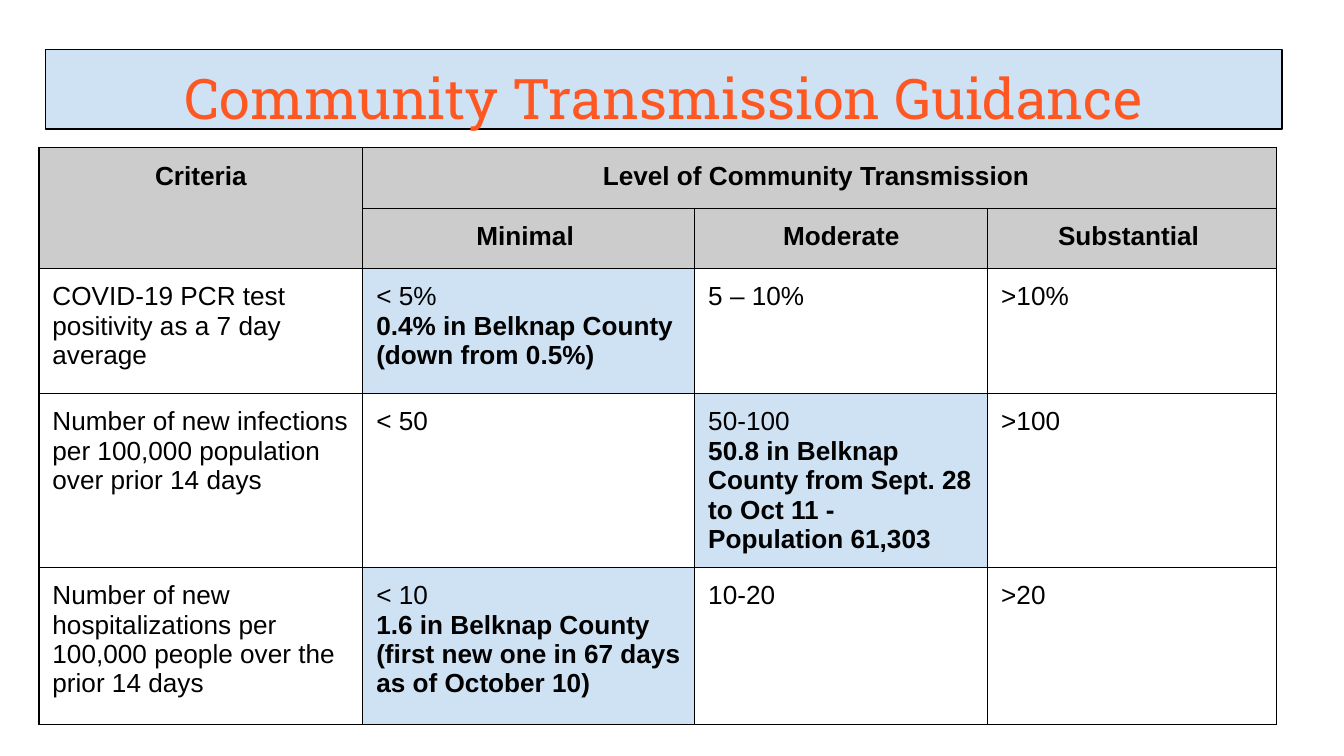
from lxml import etree
from pptx import Presentation
from pptx.dml.color import RGBColor
from pptx.enum import text
from pptx.oxml import ns
from pptx.util import Inches, Pt

COLORS = {
    "title": "FF5722",
    "ink": "000000",
    "header": "CCCCCC",
    "highlight": "CFE2F3",
    "plain": "FFFFFF",
}
TITLE = "Community Transmission Guidance"
HEADERS = [
    ["Criteria", "Level of Community Transmission ", "", ""],
    ["", "Minimal ", "Moderate", "Substantial "],
]
CRITERIA = [
    [
        ["COVID-19 PCR test positivity as a 7 day average"],
        ["< 5%", "0.4% in Belknap County (down from 0.5%)"],
        ["5 – 10%"],
        [">10%"],
    ],
    [
        ["Number of new infections per 100,000 population over prior 14 days"],
        ["< 50"],
        ["50-100", "50.8 in Belknap County from Sept. 28 to Oct 11 - Population 61,303"],
        [">100"],
    ],
    [
        ["Number of new hospitalizations per 100,000 people over the prior 14 days"],
        ["< 10", "1.6 in Belknap County (first new one in 67 days as of October 10)"],
        ["10-20"],
        [">20"],
    ],
]
SLIDE_WIDTH = Inches(10)
SLIDE_HEIGHT = SLIDE_WIDTH * 9 // 16
COLUMN_WIDTHS = [2.41, 2.47, 2.18, 2.15]
ROW_HEIGHTS = [0.45, 0.45, 0.93, 1.29, 1.17]
MARGINS = {f"margin_{side}": Inches(0.1) for side in ("left", "top", "right", "bottom")}
BORDER = Pt(0.75)


def rgb(name):
    return RGBColor.from_string(COLORS[name])


def apply(target, values):
    for name, value in values.items():
        setattr(target, name, value)


def paint(target, color):
    target.fill.solid()
    target.fill.fore_color.rgb = rgb(color)


def write(para, words, size, face, color, bold, align):
    para.alignment = align
    span = para.add_run()
    span.text = words
    apply(span.font, {"size": Pt(size), "name": face, "bold": bold})
    span.font.color.rgb = rgb(color)


def outline(cell):
    properties = cell._tc.get_or_add_tcPr()
    for index, side in enumerate(("lnL", "lnR", "lnT", "lnB")):
        line = etree.Element(ns.qn(f"a:{side}"), w=str(BORDER))
        fill = etree.SubElement(line, ns.qn("a:solidFill"))
        etree.SubElement(fill, ns.qn("a:srgbClr"), val=COLORS["ink"])
        properties.insert(index, line)


def add_title(page):
    box = page.shapes.title
    apply(box, {"left": Inches(0.34), "top": Inches(0.37),
                "width": Inches(9.2), "height": Inches(0.59)})
    paint(box, "highlight")
    box.line.color.rgb = rgb("ink")
    box.line.width = BORDER
    frame = box.text_frame
    apply(frame, MARGINS | {"word_wrap": True, "auto_size": text.MSO_AUTO_SIZE.NONE,
                            "vertical_anchor": text.MSO_ANCHOR.TOP})
    write(frame.paragraphs[0], TITLE, 30, "Roboto Slab", "title", False,
          text.PP_ALIGN.CENTER)


def fill_cell(cell, lines, color, header):
    apply(cell, MARGINS | {"vertical_anchor": text.MSO_ANCHOR.TOP})
    paint(cell, color)
    outline(cell)
    align = text.PP_ALIGN.CENTER if header else text.PP_ALIGN.LEFT
    frame = cell.text_frame
    for index, words in enumerate(lines):
        para = frame.add_paragraph() if index else frame.paragraphs[0]
        write(para, words, 14, "Arial", "ink", header or index > 0, align)


def add_criteria_table(page):
    table = page.shapes.add_table(
        len(ROW_HEIGHTS), len(COLUMN_WIDTHS), Inches(0.29), Inches(1.1),
        Inches(sum(COLUMN_WIDTHS)), Inches(sum(ROW_HEIGHTS))).table
    apply(table, {"first_row": False, "horz_banding": False})
    for column, width in zip(table.columns, COLUMN_WIDTHS):
        column.width = Inches(width)
    for row, height in zip(table.rows, ROW_HEIGHTS):
        row.height = Inches(height)
    for row, labels in zip(table.rows, HEADERS):
        for cell, label in zip(row.cells, labels):
            fill_cell(cell, [label] if label else [], "header", True)
    for row, entries in zip(list(table.rows)[len(HEADERS):], CRITERIA):
        for cell, lines in zip(row.cells, entries):
            fill_cell(cell, lines, "highlight" if len(lines) > 1 else "plain", False)
    table.cell(0, 0).merge(table.cell(1, 0))
    table.cell(0, 1).merge(table.cell(0, 3))


def main():
    deck = Presentation()
    apply(deck, {"slide_width": SLIDE_WIDTH, "slide_height": SLIDE_HEIGHT})
    page = deck.slides.add_slide(deck.slide_layouts.get_by_name("Title Only"))
    add_title(page)
    add_criteria_table(page)
    deck.save("out.pptx")


if __name__ == "__main__":
    main()
